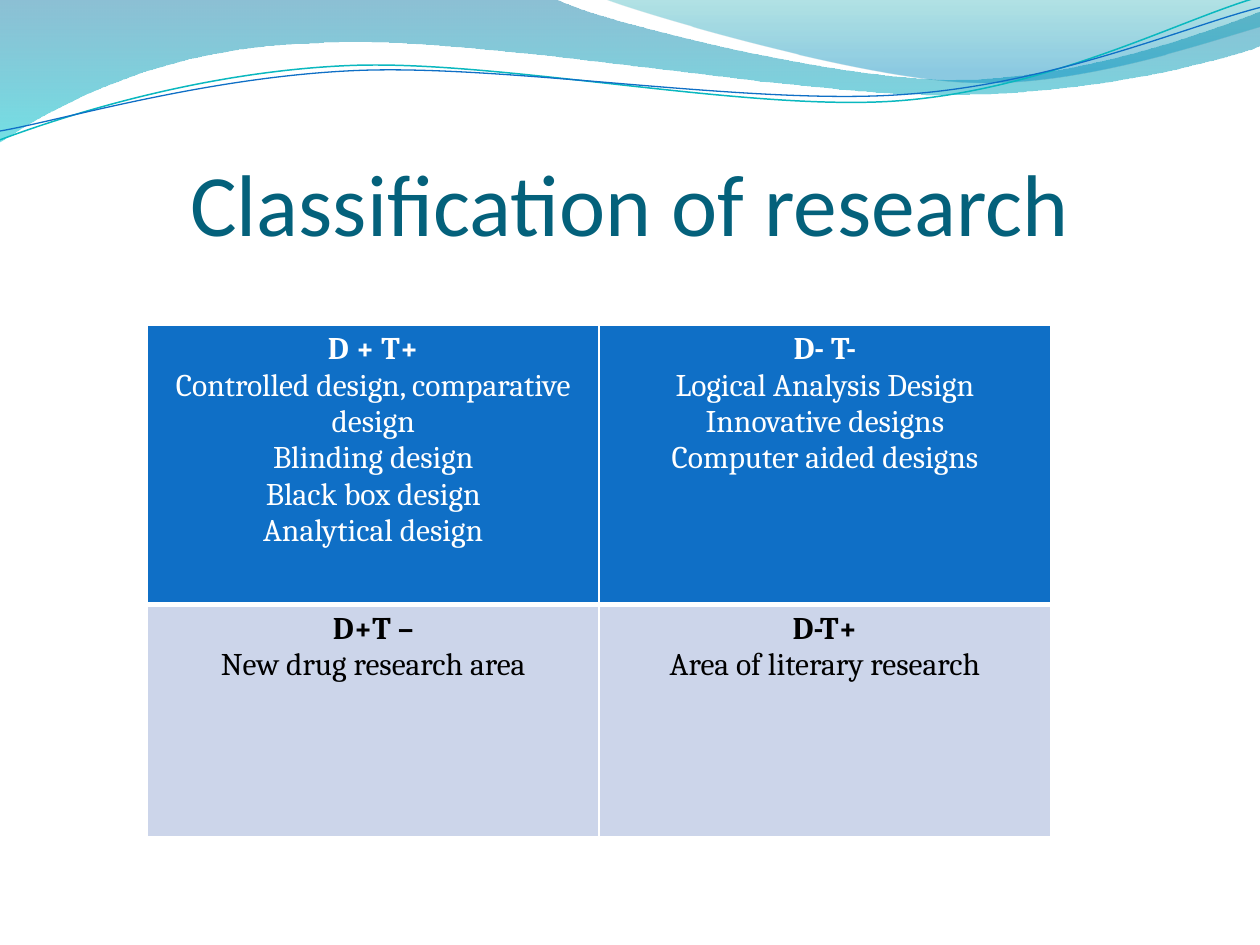
from math import cos, radians, sin

from lxml.etree import SubElement
from pptx import Presentation
from pptx.dml.color import RGBColor
from pptx.enum.text import MSO_ANCHOR, PP_ALIGN
from pptx.oxml.ns import qn
from pptx.util import Inches, Pt

WHITE, BLACK, BLUE, PALE = "FFFFFF", "000000", "0F6FC6", "CCD5EA"
TILT = 2.7


def color(code):
    return RGBColor.from_string(code)


def turn(point, mid):
    """Turn a point clockwise by TILT degrees about mid."""
    x, y = point[0] - mid[0], point[1] - mid[1]
    c, s = cos(radians(TILT)), sin(radians(TILT))
    return mid[0] + x * c - y * s, mid[1] + x * s + y * c


def pairs(part):
    return list(zip(part[::2], part[1::2]))


class Deck:
    font = "Cambria"
    size = Pt(18)

    def __init__(self):
        self.prs = Presentation()
        self.prs.slide_width, self.prs.slide_height = Inches(10), Inches(7.5)
        self.slide = self.prs.slides.add_slide(self.prs.slide_layouts[5])

    def curve(self, start, parts, closed, mid=None):
        """Draw parts: two numbers are a line, six a cubic curve."""
        points = [start] + [p for part in parts for p in pairs(part)]
        if mid:
            points = [turn(p, mid) for p in points]
        points = [(Inches(x), Inches(y)) for x, y in points]
        pen = self.slide.shapes.build_freeform(*points[0], scale=1.0)
        pen.add_line_segments(points[1:], close=closed)
        shape = pen.convert_to_shape()
        shape.shadow.inherit = False
        lines = list(shape._element.iter(qn("a:lnTo")))
        for part in parts:
            group = [lines.pop(0) for pair in pairs(part)]
            if len(group) == 3:
                first = group[0]
                first.tag = qn("a:cubicBezTo")
                for line in group[1:]:
                    first.append(line[0])
                    line.getparent().remove(line)
        return shape

    def wave(self, start, parts, stops):
        """Draw a band with a see-through gradient from top to bottom."""
        shape = self.curve(start, parts, True)
        shape.line.fill.background()
        shape.fill.gradient()
        shape.fill.gradient_angle = 270
        for stop, (place, code, alpha) in zip(shape.fill.gradient_stops, stops):
            stop.position = place
            stop.color.rgb = color(code)
        tints = shape._element.spPr.iter(qn("a:srgbClr"))
        for tint, (place, code, alpha) in zip(tints, stops):
            SubElement(tint, qn("a:alpha"), val=str(alpha * 1000))

    def strand(self, start, parts, mid, code, width):
        shape = self.curve(start, parts, False, mid)
        shape.rotation = 360 - TILT
        shape.fill.background()
        shape.line.color.rgb = color(code)
        shape.line.width = Pt(width)

    def title(self, text, box):
        shape = self.slide.shapes.title
        shape.left, shape.top, shape.width, shape.height = map(Inches, box)
        frame = shape.text_frame
        frame.text = text
        frame.word_wrap = True
        frame.vertical_anchor = MSO_ANCHOR.BOTTOM
        frame.margin_left = frame.margin_right = frame.margin_bottom = 0
        frame.margin_top = Inches(0.05)
        par = frame.paragraphs[0]
        par.alignment = PP_ALIGN.CENTER
        par.font.name, par.font.size = "Calibri", Pt(50)
        par.font.color.rgb = color("04617B")

    def table(self, rows, looks, heights, box):
        table = self.slide.shapes.add_table(
            len(rows), len(rows[0]), *map(Inches, box)).table
        table.horz_banding = False
        for row, height in zip(table.rows, heights):
            row.height = Inches(height)
        for r, (row, look) in enumerate(zip(rows, looks)):
            for c, lines in enumerate(row):
                self.cell(table.cell(r, c), lines, *look)

    def cell(self, cell, lines, fill, ink, top, base):
        """Fill a cell; its first line is a bold heading."""
        cell.margin_left = cell.margin_right = Inches(0.02)
        cell.margin_top = cell.margin_bottom = Inches(0.05)
        cell.text = "\n".join(lines)
        for i, par in enumerate(cell.text_frame.paragraphs):
            par.alignment = PP_ALIGN.CENTER
            par.font.name, par.font.size = self.font, self.size
            par.font.bold = i == 0
            par.font.color.rgb = color(ink)
        props = cell._tc.get_or_add_tcPr()
        for side, width in zip("LRTB", (1, 1, top, base)):
            edge = SubElement(props, qn(f"a:ln{side}"), w=str(Pt(width)))
            paint = SubElement(edge, qn("a:solidFill"))
            SubElement(paint, qn("a:srgbClr"), val=WHITE)
        cell.fill.solid()
        cell.fill.fore_color.rgb = color(fill)


def main():
    deck = Deck()
    deck.wave((0, 0), [
        (4.4, -0.01), (4.76, 0.17, 6.64, 0.63, 7.58, 0.63),
        (8.53, 0.63, 9.58, 0.26, 10, 0.09), (10.01, 0.36),
        (9.83, 0.44, 8.7, 0.76, 7.46, 0.75),
        (6.22, 0.75, 3.82, 0.28, 2.57, 0.34),
        (1.29, 0.36, 0.46, 0.83, -0.01, 1.13),
    ], [(0, "0074A1", 45), (1, "00C6CF", 55)])
    deck.wave((4.79, -0.01), [
        (5.09, 0.11, 6.82, 0.62, 7.69, 0.65),
        (8.56, 0.69, 9.61, 0.32, 10, 0.21), (10, 0),
    ], [(0, "00A1A9", 30), (0.8, "008BBF", 45)])
    deck.strand((0, 1.11), [
        (0.48, 0.93, 1.58, 0.57, 2.77, 0.52),
        (3.95, 0.47, 5.93, 0.89, 7.13, 0.8),
        (8.33, 0.71, 9.38, 0.15, 9.98, -0.02),
    ], (4.99, 0.58), "0AB8BF", 0.85)
    deck.strand((0, 1.04), [
        (0.47, 0.96, 1.64, 0.61, 2.83, 0.56),
        (4.03, 0.51, 5.97, 0.84, 7.17, 0.75),
        (8.36, 0.67, 9.41, 0.21, 10, 0.06),
    ], (5, 0.59), BLUE, 0.75)
    deck.title("Classification of research", (0.5, 0.77, 9, 1.25))
    rows = [
        [["D + T+", "Controlled design, comparative design",
          "Blinding design", "Black box design", "Analytical design"],
         ["D- T-", "Logical Analysis Design", "Innovative designs",
          "Computer aided designs"]],
        [["D+T –", "New drug research area"],
         ["D-T+", "Area of literary research"]],
    ]
    looks = [(BLUE, WHITE, 1, 3), (PALE, BLACK, 3, 1)]
    deck.table(rows, looks, (2.22, 1.84), (1.17, 2.58, 7.17, 4.06))
    deck.prs.save("out.pptx")


if __name__ == "__main__":
    main()
